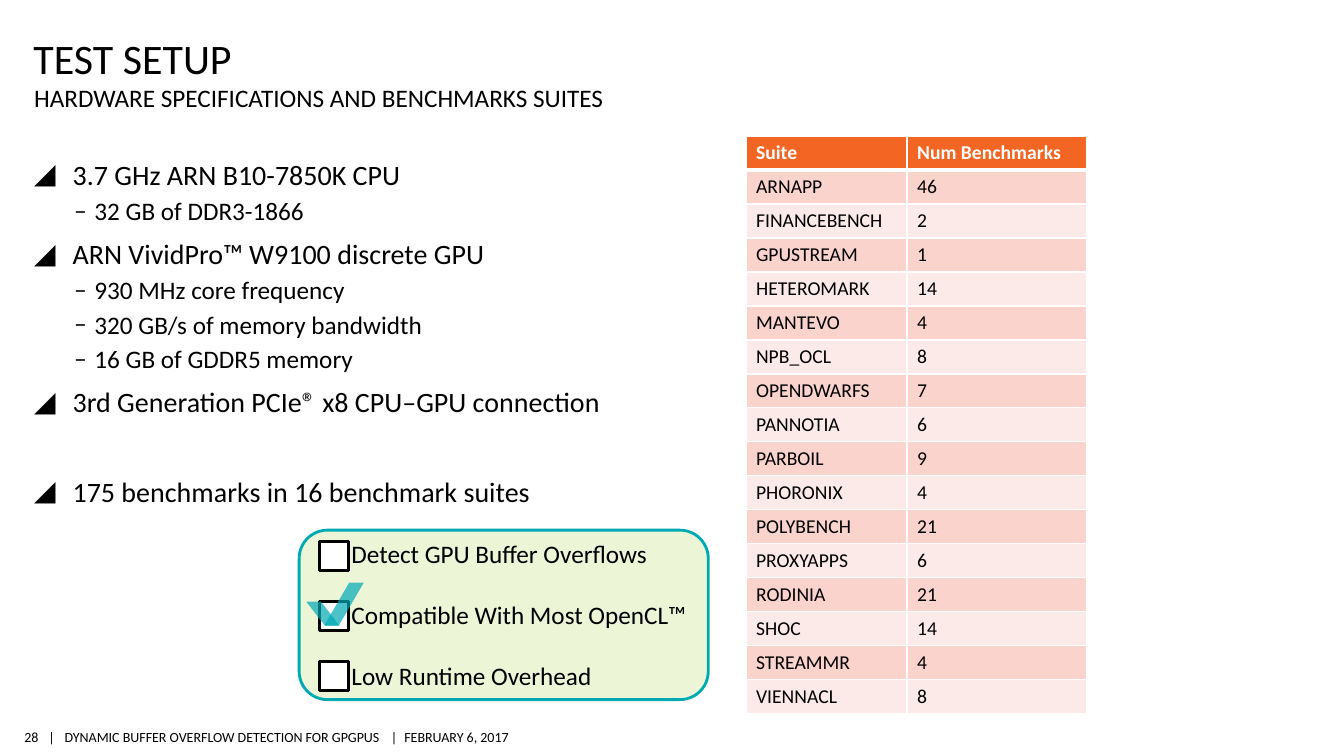
import lxml.etree
import pptx
import pptx.dml.color
import pptx.enum.shapes
import pptx.enum.text
import pptx.oxml.ns
import pptx.util

Cm = pptx.util.Cm
Pt = pptx.util.Pt
ALIGN = pptx.enum.text.PP_ALIGN
ANCHOR = pptx.enum.text.MSO_ANCHOR
SHAPE = pptx.enum.shapes.MSO_SHAPE


def color(value):
    return pptx.dml.color.RGBColor.from_string(value)


def assign(target, values):
    for name, value in values.items():
        setattr(target, name, value)


def add_element(parent, tag, **attributes):
    element = lxml.etree.SubElement(parent, pptx.oxml.ns.qn(tag))
    for name, value in attributes.items():
        element.set(name, str(value))
    return element


class SlideBuilder:
    font = "Calibri"
    black = "000000"
    white = "FFFFFF"
    teal = "00AAB5"
    levels = [
        {"mark": "◢", "left": 0.97, "hang": 0.97, "size": 20, "before": 8},
        {"mark": "‒", "left": 1.52, "hang": 0.51, "size": 18, "before": 3},
    ]

    def __init__(self, page):
        self.page = page

    def place(self, box, left, top, width, height):
        assign(box, {"left": Cm(left), "top": Cm(top), "width": Cm(width), "height": Cm(height)})

    def frame(self, box, anchor, margins):
        left, top, right, bottom = map(Cm, margins)
        assign(box.text_frame, {
            "word_wrap": True,
            "auto_size": pptx.enum.text.MSO_AUTO_SIZE.NONE,
            "vertical_anchor": anchor,
            "margin_left": left, "margin_top": top,
            "margin_right": right, "margin_bottom": bottom,
        })
        return box.text_frame

    def add_text(self, para, text, size, ink=black, bold=False, align=ALIGN.LEFT, before=0):
        assign(para, {"alignment": align, "space_before": Pt(before)})
        span = para.add_run()
        span.text = text
        assign(span.font, {"name": self.font, "size": Pt(size), "bold": bold})
        span.font.color.rgb = color(ink)

    def indent(self, para, left, hang=0):
        properties = para._p.get_or_add_pPr()
        properties.set("marL", str(Cm(left)))
        properties.set("indent", str(-Cm(hang)))
        return properties

    def paragraphs(self, text_frame, count):
        return [text_frame.paragraphs[0]] + [text_frame.add_paragraph() for _ in range(count - 1)]

    def heading(self, box, position, text, size, anchor, margins):
        self.place(box, *position)
        para = self.frame(box, anchor, margins).paragraphs[0]
        add_element(self.indent(para, 0), "a:buNone")
        self.add_text(para, text, size)

    def bullets(self, box, position, items):
        self.place(box, *position)
        text_frame = self.frame(box, ANCHOR.TOP, (0, 0.13, 0, 0.13))
        for index, (para, item) in enumerate(zip(self.paragraphs(text_frame, len(items)), items)):
            level, text, extra = item
            style = self.levels[level]
            para.level = level
            properties = self.indent(para, style["left"], style["hang"])
            add_element(add_element(properties, "a:buClr"), "a:srgbClr", val=self.black)
            add_element(properties, "a:buFont", typeface=self.font)
            add_element(properties, "a:buChar", char=style["mark"])
            before = style["before"] + extra if index else 0
            self.add_text(para, text, style["size"], before=before)

    def label(self, position, text, align=ALIGN.LEFT, wrap=True, tabs=()):
        box = self.page.shapes.add_textbox(*map(Cm, position))
        text_frame = self.frame(box, ANCHOR.MIDDLE, (0, 0.1, 0, 0.1))
        text_frame.word_wrap = wrap
        para = text_frame.paragraphs[0]
        if tabs:
            stops = add_element(para._p.get_or_add_pPr(), "a:tabLst")
            for stop in tabs:
                add_element(stops, "a:tab", pos=Cm(stop), algn="l")
        self.add_text(para, text, 10, align=align)

    def shape(self, kind, position, fill, line=None, alpha=None):
        box = self.page.shapes.add_shape(kind, *map(Cm, position))
        box.shadow.inherit = False
        box.fill.solid()
        box.fill.fore_color.rgb = color(fill)
        if alpha:
            for tone in box._element.spPr.iter(pptx.oxml.ns.qn("a:srgbClr")):
                add_element(tone, "a:alpha", val=alpha * 1000)
        if line:
            box.line.color.rgb = color(line)
            box.line.width = Pt(2)
        else:
            box.line.fill.background()
        return box

    def checklist(self, position, goals):
        panel = self.shape(SHAPE.ROUNDED_RECTANGLE, position, "EDF5D7", self.teal)
        text_frame = self.frame(panel, ANCHOR.MIDDLE, (0.25, 0.13, 0, 0.13))
        for index, (para, goal) in enumerate(zip(self.paragraphs(text_frame, len(goals)), goals)):
            self.indent(para, 0.86)
            self.add_text(para, goal, 18, before=22 if index else 0)
            self.shape(SHAPE.RECTANGLE, (8.05, 13.64 + 1.51 * index, 0.74, 0.74), self.white, self.black)

    def tick_stroke(self, position, slant, flip=False):
        stroke = self.shape(SHAPE.PARALLELOGRAM, position, self.teal, alpha=70)
        stroke.adjustments[0] = slant
        if flip:
            stroke._element.spPr.xfrm.set("flipH", "1")

    def border(self, cell, tag, width):
        line = add_element(cell._tc.get_or_add_tcPr(), tag, w=Pt(width))
        add_element(add_element(line, "a:solidFill"), "a:srgbClr", val=self.white)

    def table(self, left, top, widths, row_height, rows):
        grid = self.page.shapes.add_table(
            len(rows), len(widths), Cm(left), Cm(top), Cm(sum(widths)), Cm(row_height * len(rows))).table
        for column, width in zip(grid.columns, widths):
            column.width = Cm(width)
        for row_index, values in enumerate(rows):
            grid.rows[row_index].height = Cm(row_height)
            header = row_index == 0
            fill = "F26522" if header else ("FCEAE8", "FAD3CD")[row_index % 2]
            for column_index, value in enumerate(values):
                cell = grid.cell(row_index, column_index)
                cell.vertical_anchor = ANCHOR.BOTTOM
                for tag in ("a:lnL", "a:lnR", "a:lnT", "a:lnB"):
                    thick = (header and tag == "a:lnB") or (row_index == 1 and tag == "a:lnT")
                    self.border(cell, tag, 3 if thick else 1)
                cell.fill.solid()
                cell.fill.fore_color.rgb = color(fill)
                ink = self.white if header else self.black
                self.add_text(cell.text_frame.paragraphs[0], str(value), 14, ink, header)


HARDWARE = [
    (0, "3.7 GHz ARN B10-7850K CPU", 0),
    (1, "32 GB of DDR3-1866", 0),
    (0, "ARN VividPro™ W9100 discrete GPU", 0),
    (1, "930 MHz core frequency", 0),
    (1, "320 GB/s of memory bandwidth", 0),
    (1, "16 GB of GDDR5 memory", 0),
    (0, "3rd Generation PCIe® x8 CPU–GPU connection", 0),
    (0, "175 benchmarks in 16 benchmark suites", 32),
]
SUITES = [
    ("Suite", "Num Benchmarks"),
    ("ARNAPP", 46), ("FINANCEBENCH", 2), ("GPUSTREAM", 1), ("HETEROMARK", 14),
    ("MANTEVO", 4), ("NPB_OCL", 8), ("OPENDWARFS", 7), ("PANNOTIA", 6),
    ("PARBOIL", 9), ("PHORONIX", 4), ("POLYBENCH", 21), ("PROXYAPPS", 6),
    ("RODINIA", 21), ("SHOC", 14), ("STREAMMR", 4), ("VIENNACL", 8),
]
GOALS = ["Detect GPU Buffer Overflows", "Compatible With Most OpenCL™", "Low Runtime Overhead"]


def main():
    deck = pptx.Presentation()
    assign(deck, {"slide_width": Cm(33.87), "slide_height": Cm(19.05)})
    page = deck.slides.add_slide(deck.slide_layouts[3])
    title, hardware, subtitle = page.placeholders
    builder = SlideBuilder(page)
    builder.label((0.56, 18.24, 0.41, 0.66), "28", ALIGN.RIGHT, wrap=False)
    builder.label((1.22, 18.24, 11.96, 0.66),
                  "|\tDYNAMIC BUFFER OVERFLOW DETECTION FOR GPGPUS\t|\tFEBRUARY 6, 2017",
                  tabs=(0.41, 8.63, 8.97))
    builder.heading(title, (0.84, 0.76, 28.96, 1.32), "TEST SETUP", 30, ANCHOR.BOTTOM, (0, 0.13, 0, 0))
    builder.bullets(hardware, (0.86, 3.84, 14.73, 13.97), HARDWARE)
    builder.heading(subtitle, (0.86, 2.08, 28.96, 0.79),
                    "HARDWARE SPECIFICATIONS AND BENCHMARKS SUITES", 18, ANCHOR.TOP, (0, 0, 0, 0))
    builder.table(18.8, 3.43, (4.06, 4.52), 0.85, SUITES)
    builder.checklist((7.54, 13.36, 10.31, 4.27), GOALS)
    builder.tick_stroke((8.18, 14.68, 0.99, 1.07), 0.63)
    builder.tick_stroke((7.72, 15.16, 0.84, 0.61), 0.77, flip=True)
    deck.save("out.pptx")


if __name__ == "__main__":
    main()
